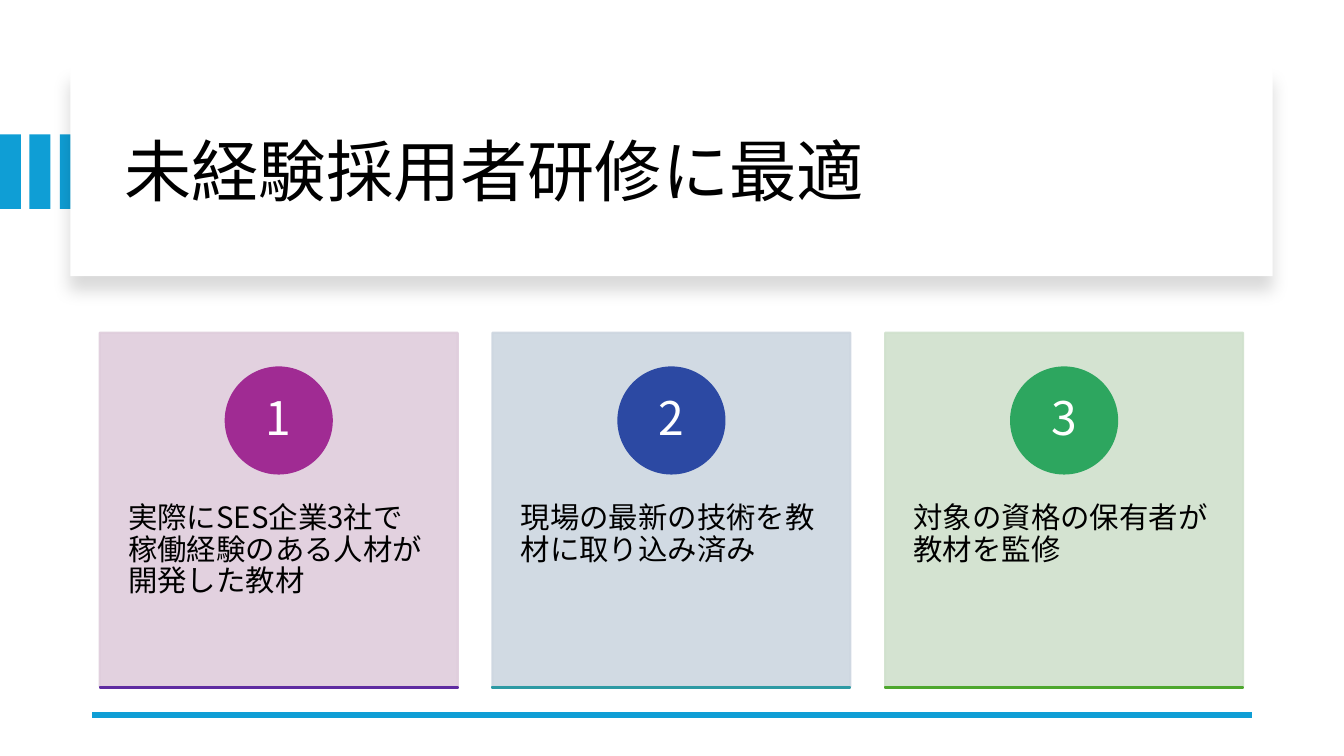
from lxml.etree import SubElement
from pptx import Presentation
from pptx.dml.color import RGBColor
from pptx.enum.shapes import MSO_CONNECTOR, MSO_SHAPE
from pptx.enum.text import MSO_ANCHOR, MSO_AUTO_SIZE, PP_ALIGN
from pptx.oxml.ns import qn
from pptx.util import Pt

PX = 9525  # EMU per px, 1280 x 720 px slide
FONT = "Noto Sans CJK JP"
ACCENT = "0F9ED5"

CARDS = [  # text, panel, circle, bottom rule
    ("実際にSES企業3社で稼働経験のある人材が開発した教材", "DFCDDC", "A02B93", "5F2CA1"),
    ("現場の最新の技術を教材に取り込み済み", "CDD6E0", "2C49A3", "2D9AA4"),
    ("対象の資格の保有者が教材を監修", "D0E1CD", "2DA65F", "4EA72E"),
]
CARD_LEFT, CARD_TOP, CARD_WIDTH, CARD_HEIGHT, CARD_STEP = 95, 317, 341, 337, 374
CIRCLE, NUMBER = 101, 71


def px(*lengths):
    return [length * PX for length in lengths]


def color(hex_text):
    return RGBColor.from_string(hex_text)


def set_alpha(fill_parent, percent):
    """Make the solid fill below fill_parent partly transparent."""
    solid = fill_parent.find(qn("a:solidFill"))
    SubElement(solid[0], qn("a:alpha"), val=str(percent * 1000))


def add_block(shapes, kind, at, fill, outlined=False, opacity=100):
    block = shapes.add_shape(kind, *px(*at))
    block.shadow.inherit = False
    block.fill.solid()
    block.fill.fore_color.rgb = color(fill)
    if outlined:
        block.line.color.rgb = color(fill)
        block.line.width = Pt(1.5)
    else:
        block.line.fill.background()
    if opacity < 100:
        properties = block._element.spPr
        set_alpha(properties, opacity)
        set_alpha(properties.find(qn("a:ln")), opacity)
    return block


def add_drop_shadow(block):
    effects = block._element.spPr.find(qn("a:effectLst"))
    shadow = SubElement(effects, qn("a:outerShdw"), blurRad=str(Pt(11)),
                        dist=str(Pt(10)), dir="5400000", algn="t", rotWithShape="0")
    tint = SubElement(shadow, qn("a:srgbClr"), val="000000")
    SubElement(tint, qn("a:alpha"), val="15000")


def write(box, text, size, ink="000000", align=PP_ALIGN.LEFT,
          anchor=MSO_ANCHOR.TOP, insets=None):
    frame = box.text_frame
    frame.word_wrap = True
    frame.auto_size = MSO_AUTO_SIZE.NONE
    frame.vertical_anchor = anchor
    if insets:
        side, end = px(*insets)
        frame.margin_left = frame.margin_right = side
        frame.margin_top = frame.margin_bottom = end
    para = frame.paragraphs[0]
    para.alignment = align
    para.line_spacing = 0.9
    span = para.add_run()
    span.text = text
    span.font.size = Pt(size)
    span.font.name = FONT
    span.font.color.rgb = color(ink)
    SubElement(span.font._element, qn("a:ea"), typeface=FONT)


def add_header(page):
    # Accent strips running under the title panel
    strips = page.shapes.add_group_shape().shapes
    for left in (0, 28, 57):
        add_block(strips, MSO_SHAPE.RECTANGLE, (left, 128, 20, 71), ACCENT)
    panel = add_block(page.shapes, MSO_SHAPE.RECTANGLE, (67, 64, 1145, 199), "FFFFFF")
    add_drop_shadow(panel)

    # Title, brought in front of its panel
    title = page.shapes.title
    title.left, title.top, title.width, title.height = px(109, 85, 1068, 163)
    write(title, "未経験採用者研修に最適", 48, anchor=MSO_ANCHOR.MIDDLE)
    title._element.getparent().append(title._element)


def add_base_line(page):
    line = page.shapes.add_connector(MSO_CONNECTOR.STRAIGHT, *px(1192, 681, 88, 681))
    line.line.color.rgb = color(ACCENT)
    line.line.width = Pt(4.5)
    SubElement(line._element.spPr, qn("a:effectLst"))


def add_card(shapes, index, text, panel, circle, rule):
    left = CARD_LEFT + index * CARD_STEP
    add_block(shapes, MSO_SHAPE.RECTANGLE, (left, CARD_TOP, CARD_WIDTH, CARD_HEIGHT),
              panel, outlined=True, opacity=90)
    body = shapes.add_textbox(*px(left, CARD_TOP + 127, CARD_WIDTH, 203))
    write(body, text, 21, insets=(27, 35))

    # Numbered circle
    circle_left = left + (CARD_WIDTH - CIRCLE) // 2
    circle_top = CARD_TOP + 33
    add_block(shapes, MSO_SHAPE.OVAL, (circle_left, circle_top, CIRCLE, CIRCLE),
              circle, outlined=True)
    inset = (CIRCLE - NUMBER) // 2
    number = shapes.add_textbox(*px(circle_left + inset, circle_top + inset, NUMBER, NUMBER))
    write(number, str(index + 1), 33, "FFFFFF", PP_ALIGN.CENTER, MSO_ANCHOR.MIDDLE, (8, 1))

    # Bottom rule
    add_block(shapes, MSO_SHAPE.RECTANGLE, (left, CARD_TOP + CARD_HEIGHT, CARD_WIDTH, 1),
              rule, outlined=True)


def main():
    deck = Presentation()
    deck.slide_width, deck.slide_height = px(1280, 720)
    page = deck.slides.add_slide(deck.slide_layouts[5])
    add_header(page)
    add_base_line(page)
    cards = page.shapes.add_group_shape().shapes
    for index, card in enumerate(CARDS):
        add_card(cards, index, *card)
    deck.save("out.pptx")


if __name__ == "__main__":
    main()
